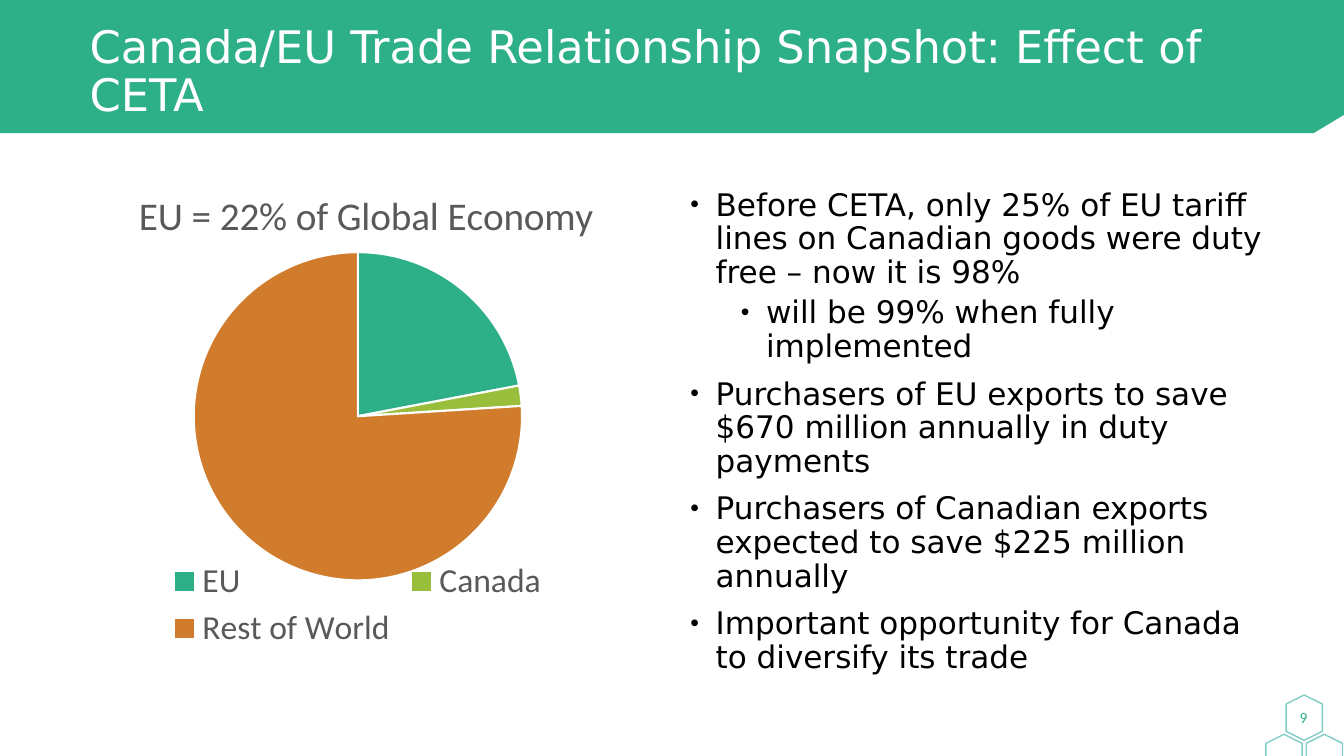
import pptx
import pptx.chart.data
import pptx.dml.color
import pptx.enum.chart
import pptx.enum.shapes
import pptx.enum.text
import pptx.oxml.ns
import pptx.oxml.xmlchemy
import pptx.util
from pptx.util import Inches

COLORS = {"green": "2DAF88", "lime": "99BE3C", "orange": "D17C2C", "teal": "00998D",
          "grey": "595959", "white": "FFFFFF", "black": "000000"}
BODY_FONT, CHART_FONT = "DejaVu Sans", "Calibri"
SHARES = {"EU": (22, "green"), "Canada": (2, "lime"), "Rest of World": (76, "orange")}
POINTS = [
    (0, "Before CETA, only 25% of EU tariff lines on Canadian goods were duty free – now it is 98%"),
    (1, "will be 99% when fully implemented"),
    (0, "Purchasers of EU exports to save $670 million annually in duty payments"),
    (0, "Purchasers of Canadian exports expected to save $225 million annually"),
    (0, "Important opportunity for Canada to diversify its trade"),
]


def rgb(name):
    return pptx.dml.color.RGBColor.from_string(COLORS[name])


def set_font(font, size, color, name):
    font.size, font.name = pptx.util.Pt(size), name
    font.color.rgb = rgb(color)


def add_xml(parent, tag, **attrs):
    element = pptx.oxml.xmlchemy.OxmlElement(tag)
    for key, value in attrs.items():
        element.set(key, str(value))
    parent.append(element)
    return element


def add_text(p, text, size=22.2, color="black", font=BODY_FONT, spacing=None, align=None):
    r = p.add_run()
    r.text = text
    set_font(r.font, size, color, font)
    p.line_spacing, p.alignment = spacing, align


def add_box(s, x, y, w, h, anchor=pptx.enum.text.MSO_ANCHOR.TOP):
    tf = s.shapes.add_textbox(Inches(x), Inches(y), Inches(w), Inches(h)).text_frame
    tf.word_wrap, tf.vertical_anchor = True, anchor
    return tf


def add_header(s, x, y, w, h):
    """Band with a cut lower right corner, and the slide title."""
    corners = [(w, 0), (w, h - 0.18), (w - 0.3, h), (0, h)]
    builder = s.shapes.build_freeform(Inches(x), Inches(y))
    builder.add_line_segments([(Inches(x + dx), Inches(y + dy)) for dx, dy in corners])
    band = builder.convert_to_shape()
    band.shadow.inherit = False
    band.fill.solid()
    band.fill.fore_color.rgb = rgb("green")
    band.line.fill.background()
    tf = add_box(s, x + 0.79, y + 0.19, w - 1.57, h - 0.25, pptx.enum.text.MSO_ANCHOR.MIDDLE)
    add_text(tf.paragraphs[0], "Canada/EU Trade Relationship Snapshot: Effect of CETA",
             size=32, color="white", spacing=0.9)


def add_page_number(s, x, y, w, h):
    """Number in the top one of three hexagons."""
    for dx, dy in [(0, 0), (0.2, 0.39), (-0.2, 0.39)]:
        cell = s.shapes.add_shape(pptx.enum.shapes.MSO_SHAPE.HEXAGON, Inches(x + dx),
                                  Inches(y + dy), Inches(w), Inches(h))
        cell.rotation = 90
        cell.shadow.inherit = False
        cell.fill.background()
        cell.line.color.rgb = rgb("teal")
        cell.line.width = pptx.util.Pt(1)
        ln = cell._element.spPr.find(pptx.oxml.ns.qn("a:ln"))
        add_xml(ln.find(pptx.oxml.ns.qn("a:solidFill"))[0], "a:alpha", val=50000)
    tf = add_box(s, x + 0.02, y + 0.01, w - 0.05, h - 0.03, pptx.enum.text.MSO_ANCHOR.MIDDLE)
    add_text(tf.paragraphs[0], "9", size=11, color="green", font=CHART_FONT,
             align=pptx.enum.text.PP_ALIGN.CENTER)


def add_layout(parent, index, **places):
    """Place a chart part by fractions of the chart."""
    for old in parent.findall(pptx.oxml.ns.qn("c:layout")):
        parent.remove(old)
    layout = pptx.oxml.xmlchemy.OxmlElement("c:layout")
    manual = add_xml(layout, "c:manualLayout")
    if "w" in places:
        add_xml(manual, "c:layoutTarget", val="inner")
    for axis in "xy":
        add_xml(manual, f"c:{axis}Mode", val="edge")
    for key, value in places.items():
        add_xml(manual, f"c:{key}", val=value)
    parent.insert(index, layout)


def add_share_pie(s, x, y, w, h):
    data = pptx.chart.data.CategoryChartData()
    data.categories = list(SHARES)
    data.add_series("Series 1", [value for value, _ in SHARES.values()])
    chart = s.shapes.add_chart(pptx.enum.chart.XL_CHART_TYPE.PIE, Inches(x), Inches(y),
                               Inches(w), Inches(h), data).chart
    set_font(chart.font, 10, "black", CHART_FONT)
    chart.has_title = True
    title = chart.chart_title.text_frame.paragraphs[0]
    add_text(title, "EU = 22% of Global Economy", size=28, color="grey", font=CHART_FONT)
    title.runs[0].font.bold = False
    add_layout(chart.chart_title._element, 1, x=0.13, y=0.06)
    add_layout(chart._chartSpace.chart.plotArea, 0, x=0.23, y=0.2, w=0.54, h=0.65)
    chart.has_legend = True
    chart.legend.position = pptx.enum.chart.XL_LEGEND_POSITION.BOTTOM
    chart.legend.include_in_layout = False
    set_font(chart.legend.font, 24, "grey", CHART_FONT)
    plot = chart.plots[0]
    plot.vary_by_categories = True
    for i, (_, color) in enumerate(SHARES.values()):
        slice_format = plot.series[0].points[i].format
        slice_format.fill.solid()
        slice_format.fill.fore_color.rgb = rgb(color)
        slice_format.line.color.rgb = rgb("white")
        slice_format.line.width = pptx.util.Pt(1.5)


def add_points(s, x, y, w, h):
    tf = add_box(s, x, y, w, h)
    for i, (level, text) in enumerate(POINTS):
        p = tf.add_paragraph() if i else tf.paragraphs[0]
        p.level = level
        pPr = p._p.get_or_add_pPr()
        pPr.set("marL", str(Inches(0.25 + 0.5 * level)))
        pPr.set("indent", str(Inches(-0.25)))
        add_xml(pPr, "a:buSzPct", val=80000)
        add_xml(pPr, "a:buFont", typeface="Arial")
        add_xml(pPr, "a:buChar", char="•")
        add_text(p, text, spacing=0.9)
        if i:
            p.space_before = pptx.util.Pt(5 if level else 10)


def main():
    prs = pptx.Presentation()
    prs.slide_width, prs.slide_height = Inches(13.33), Inches(7.5)
    s = prs.slides.add_slide(prs.slide_layouts[6])
    add_header(s, 0, 0, 13.33, 1.32)
    add_share_pie(s, 0.52, 1.5, 6.06, 5.01)
    add_points(s, 6.75, 1.83, 6.06, 5.19)
    add_page_number(s, 12.71, 6.94, 0.45, 0.36)
    prs.save("out.pptx")


if __name__ == "__main__":
    main()
